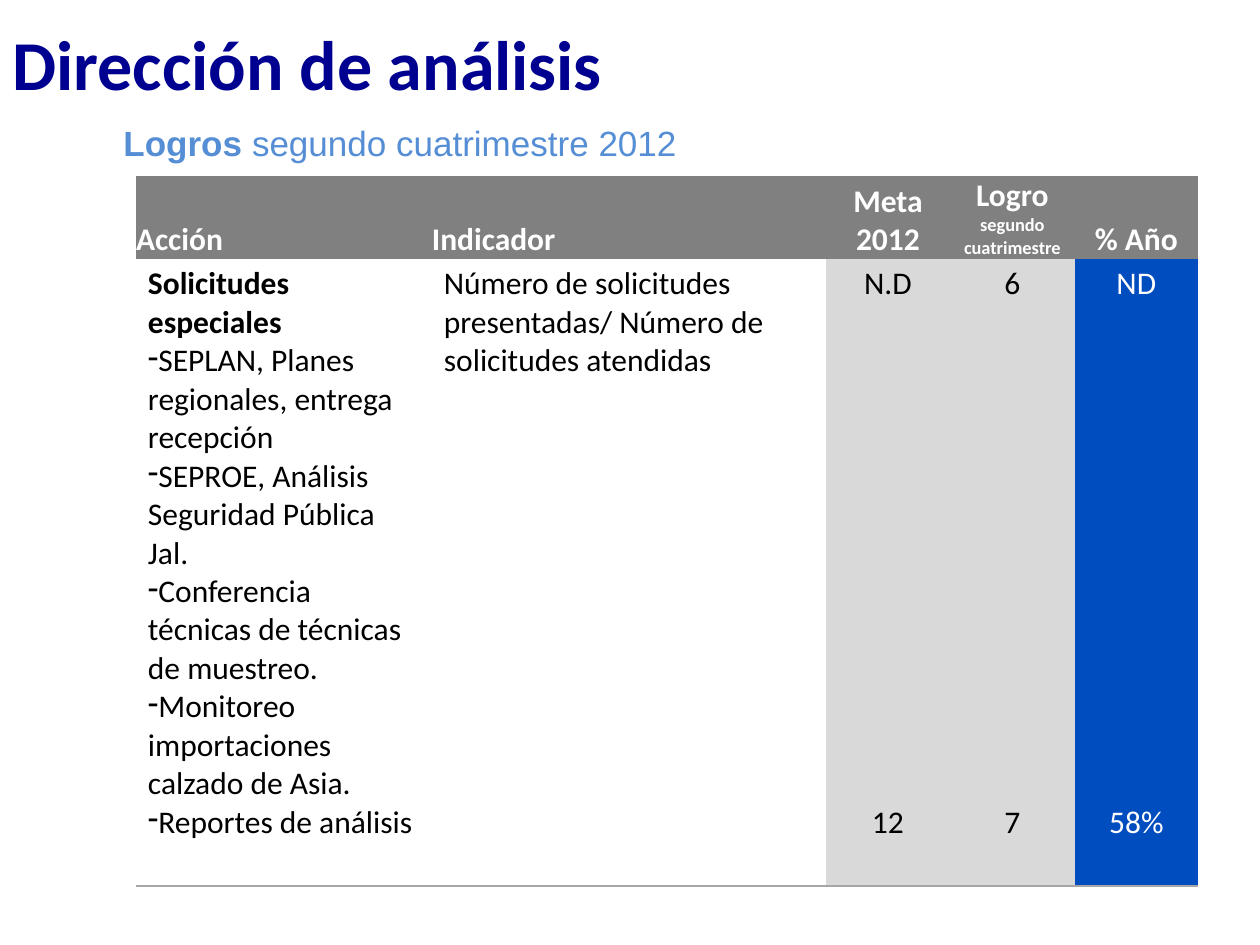
from lxml import etree
from pptx import Presentation
from pptx.dml.color import RGBColor
from pptx.enum.text import MSO_ANCHOR, MSO_AUTO_SIZE, PP_ALIGN
from pptx.oxml.ns import qn
from pptx.util import Pt

PX = 914400 // 126
TOP, MIDDLE, BOTTOM = MSO_ANCHOR.TOP, MSO_ANCHOR.MIDDLE, MSO_ANCHOR.BOTTOM
LEFT, CENTER, JUSTIFY = PP_ALIGN.LEFT, PP_ALIGN.CENTER, PP_ALIGN.JUSTIFY
NO_AUTOFIT = MSO_AUTO_SIZE.NONE
NO_TABLE_STYLE = "{2D5ABB26-0587-4C30-8999-92F81FD0307C}"
THEME = {
    "title": "000090", "subtitle": "558ED5", "header": "808080",
    "result": "D9D9D9", "percent": "004DBF", "rule": "A6A6A6",
    "light": "FFFFFF", "dark": "000000",
    "title_size": 40, "subtitle_size": 20, "table_size": 18, "small_size": 10.5,
    "table_font": "Calibri", "subtitle_font": "Arial",
}


def write(para, text, size=THEME["table_size"], font=THEME["table_font"],
          color=THEME["dark"], bold=False, align=LEFT, before=None, bullet=None):
    if bullet:
        properties = para._p.get_or_add_pPr()
        properties.set("marL", "0")
        properties.set("indent", "0")
        etree.SubElement(properties, qn("a:buFontTx"))
        etree.SubElement(properties, qn("a:buChar")).set("char", bullet)
    para.alignment = align
    if before is not None:
        para.space_before = Pt(before)
    span = para.add_run()
    span.text = text
    span.font.size = Pt(size)
    span.font.name = font
    span.font.bold = bold
    span.font.color.rgb = RGBColor.from_string(color)


def format_cell(cell, fill, anchor, margins):
    cell.vertical_anchor = anchor
    cell.margin_left = cell.margin_right = margins[0] * PX
    cell.margin_top = cell.margin_bottom = margins[1] * PX
    if fill:
        cell.fill.solid()
        cell.fill.fore_color.rgb = RGBColor.from_string(THEME[fill])
    else:
        cell.fill.background()


deck = Presentation()
deck.slide_width, deck.slide_height = 1260 * PX, 945 * PX
page = deck.slides.add_slide(deck.slide_layouts[5])

title = page.shapes.title
title.left, title.top, title.width, title.height = 0, 0, 1050 * PX, 147 * PX
title.text_frame.auto_size = NO_AUTOFIT
title.text_frame.vertical_anchor = MIDDLE
title_para = title.text_frame.paragraphs[0]
title_para.line_spacing = Pt(36)
write(title_para, "Dirección de análisis", size=THEME["title_size"],
      color=THEME["title"], bold=True)

subtitle = page.shapes.add_textbox(111 * PX, 115 * PX, 1040 * PX, 60 * PX)
subtitle.text_frame.word_wrap = True
for text, bold in (("Logros ", True), ("segundo cuatrimestre 2012", False)):
    write(subtitle.text_frame.paragraphs[0], text, size=THEME["subtitle_size"],
          font=THEME["subtitle_font"], color=THEME["subtitle"], bold=bold)

widths = [296, 394, 124, 125, 123]
heights = [83, 627]
frame = page.shapes.add_table(2, 5, 136 * PX, 176 * PX, sum(widths) * PX, sum(heights) * PX)
table = frame.table
table.first_row = table.horz_banding = False
table._tbl.tblPr.find(qn("a:tableStyleId")).text = NO_TABLE_STYLE
for column, width in zip(table.columns, widths):
    column.width = width * PX
for row, height in zip(table.rows, heights):
    row.height = height * PX

headers = [("Acción", JUSTIFY), ("Indicador", JUSTIFY), ("Meta 2012", CENTER),
           ("Logro ", CENTER), ("% Año", CENTER)]
for cell, (text, align) in zip(table.rows[0].cells, headers):
    format_cell(cell, "header", BOTTOM, (0, 0))
    write(cell.text_frame.paragraphs[0], text, color=THEME["light"], bold=True, align=align)
write(table.cell(0, 3).text_frame.paragraphs[0], "segundo cuatrimestre",
      size=THEME["small_size"], color=THEME["light"], bold=True, align=CENTER)

fills = [None, None, "result", "result", "percent"]
for cell, fill in zip(table.rows[1].cells, fills):
    format_cell(cell, fill, TOP, (12, 6))
    border = etree.Element(qn("a:lnB"), w=str(Pt(1)))
    paint = etree.SubElement(border, qn("a:solidFill"))
    etree.SubElement(paint, qn("a:srgbClr")).set("val", THEME["rule"])
    cell._tc.tcPr.insert(0, border)

actions = table.cell(1, 0).text_frame
write(actions.paragraphs[0], "Solicitudes especiales", bold=True)
for action in ("SEPLAN, Planes regionales, entrega recepción",
               "SEPROE, Análisis Seguridad Pública Jal.",
               "Conferencia técnicas de técnicas de muestreo.",
               "Monitoreo importaciones calzado de Asia.",
               "Reportes de análisis"):
    write(actions.add_paragraph(), action, bullet="-")

write(table.cell(1, 1).text_frame.paragraphs[0],
      "Número de solicitudes presentadas/ Número de solicitudes atendidas")

results = [("N.D", "12", "dark"), ("6", "7", "dark"), ("ND", "58%", "light")]
for column, (requests, reports, color) in enumerate(results, start=2):
    text_frame = table.cell(1, column).text_frame
    write(text_frame.paragraphs[0], requests, color=THEME[color], align=CENTER)
    write(text_frame.add_paragraph(), reports, color=THEME[color], align=CENTER, before=285.5)

deck.save("out.pptx")
